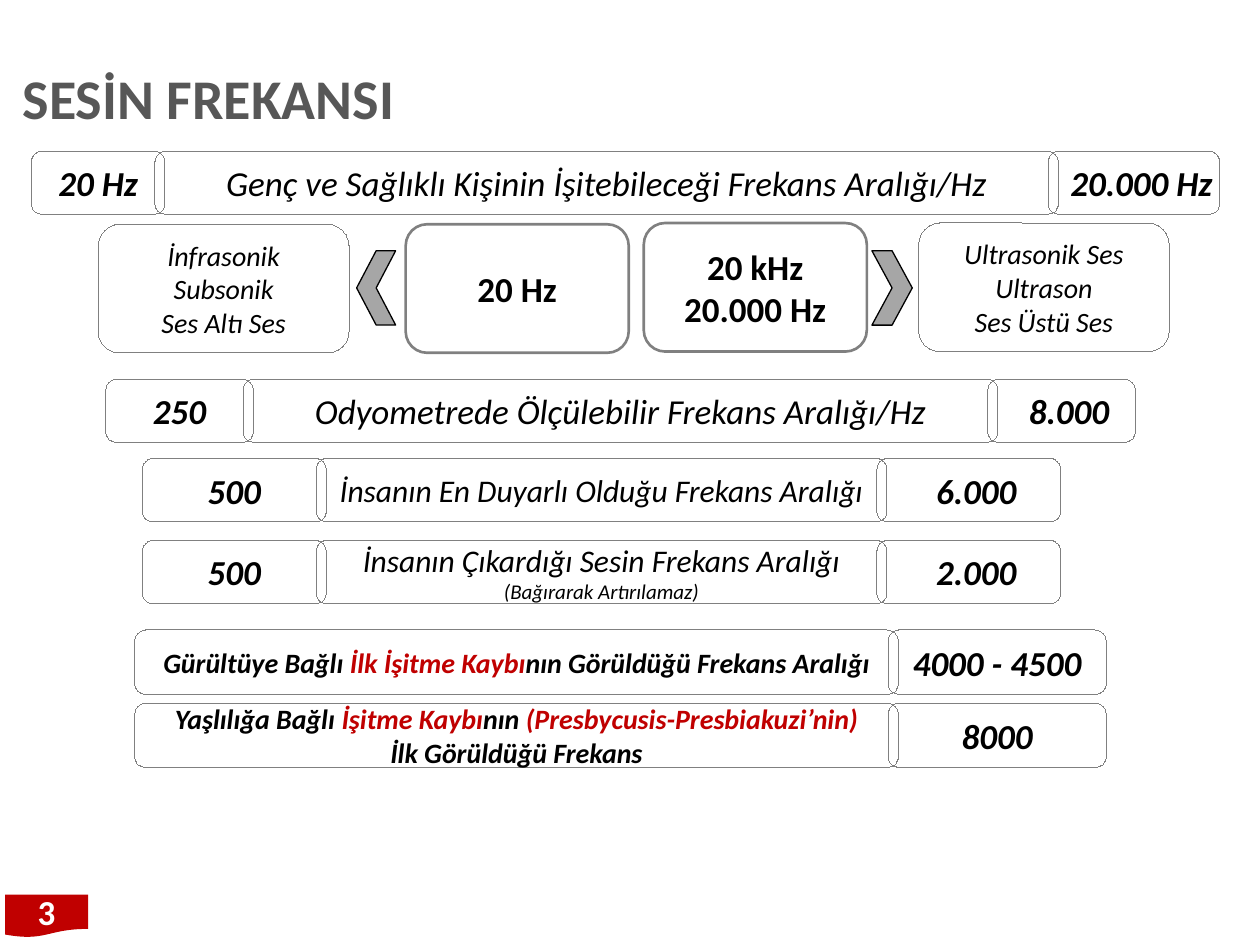
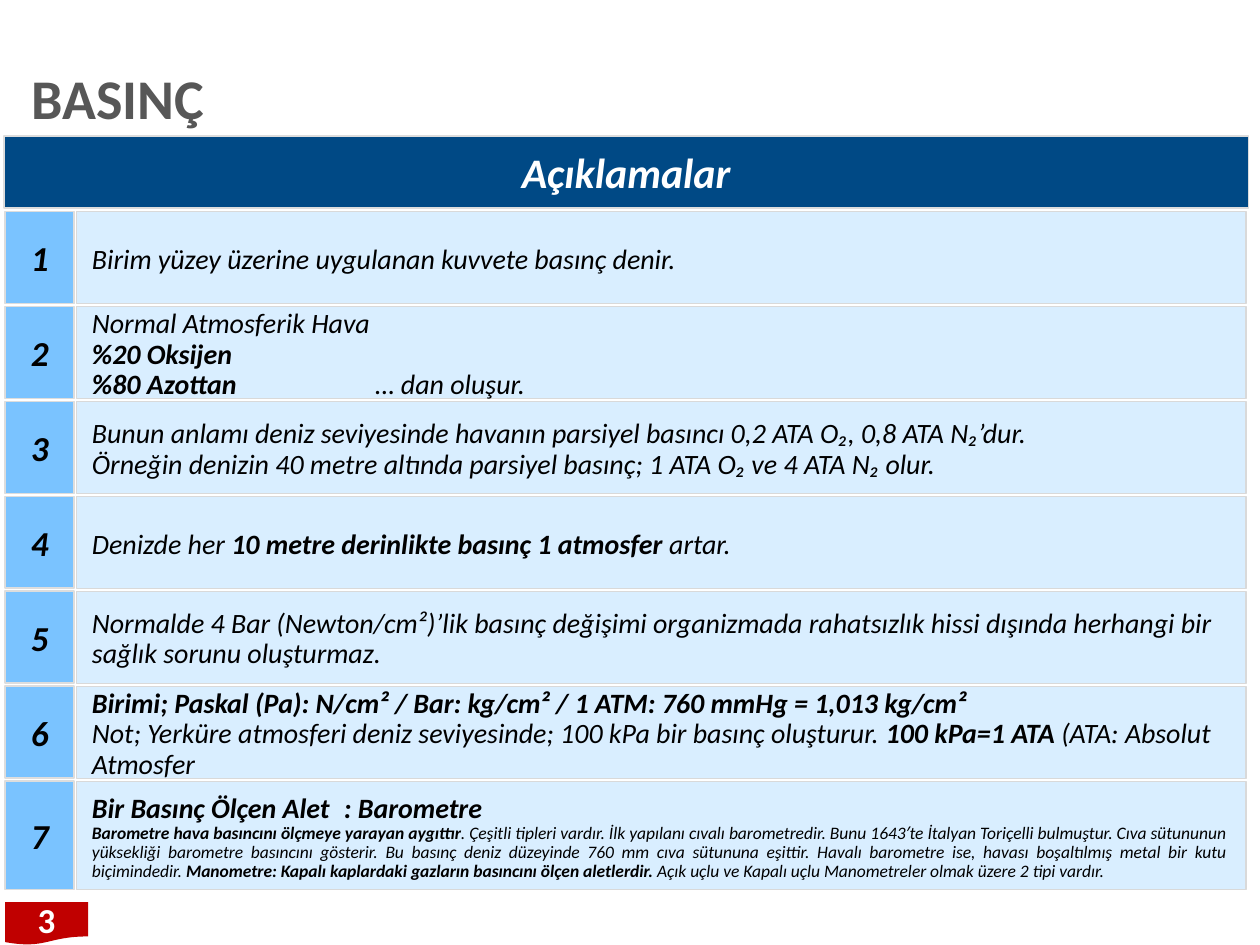
from dataclasses import dataclass
from typing import NamedTuple

from lxml.etree import SubElement
from pptx import Presentation
from pptx.dml.color import RGBColor
from pptx.enum.shapes import MSO_SHAPE
from pptx.enum.text import MSO_ANCHOR, PP_ALIGN
from pptx.oxml.ns import qn
from pptx.util import Inches, Pt

FONT = "Calibri"
BLACK, WHITE, GREY, RED = "000000", "FFFFFF", "575757", "C00000"
OUTLINE, CHEVRON = "808080", "A6A6A6"
NAVY, BLUE, PALE, EDGE, BODY_EDGE = "004985", "7AC3FF", "BDE1FF", "DDDDDD", "D9D9D9"
PILL_OVERLAP = 0.08
ROW_TOP, ROW_PITCH, ROW_HEIGHT, LAST_HEIGHT = 1.68, 4.52 / 6, 0.73, 0.86


class Run(NamedTuple):
    text: str
    size: float = 16
    bold: bool = False
    italic: bool = True
    color: str = BLACK


class Para(NamedTuple):
    runs: list[Run]
    align: PP_ALIGN = PP_ALIGN.LEFT
    tab: float = 0


class Box(NamedTuple):
    left: float
    top: float
    width: float
    height: float


@dataclass
class Style:
    fill: str | None = None
    line: str | None = None
    line_width: float = 0
    alpha: int = 100
    insets: tuple[float, float, float, float] = (0.1, 0.05, 0.1, 0.05)
    wrap: bool = True
    spacing: float | None = None


@dataclass
class PillRow:
    left: float
    top: float
    widths: list[float]
    cells: list[list[Para]]
    height: float = 0.5


PILL = Style(line=OUTLINE, wrap=False)
SHIFTED_PILL = Style(line=OUTLINE, wrap=False, insets=(0.12, 0.05, 0, 0.05))
BOLD_PILL = Style(line=OUTLINE, line_width=1.5, wrap=False)
ARROW = Style(fill=CHEVRON, line=BLACK, line_width=0.75)
PAGE_BADGE = Style(fill=RED)
TITLE = Style(insets=(0, 0.05, 0, 0.05), spacing=0.9)
HEADER = Style(fill=NAVY, line=EDGE, line_width=1, insets=(0, 0, 0, 0))
NUMBER = Style(fill=BLUE, line=EDGE, line_width=1, insets=(0, 0, 0, 0))
BODY = Style(fill=PALE, line=BODY_EDGE, line_width=0.75, alpha=56,
             insets=(0.12, 0.12, 0.16, 0.08), spacing=0.9)


def rgb(value: str) -> RGBColor:
    return RGBColor.from_string(value)


def centered(*runs: Run) -> Para:
    return Para(list(runs), PP_ALIGN.CENTER)


def value(text: str) -> list[Para]:
    return [centered(Run(text, 20, True))]


def caption(text: str, size: float) -> Para:
    return centered(Run(text, size))


def strong(text: str, color: str = BLACK) -> Run:
    return Run(text, bold=True, color=color)


def write(sp, paras: list[Para], style: Style) -> None:
    tf = sp.text_frame
    tf.word_wrap = style.wrap
    tf.vertical_anchor = MSO_ANCHOR.MIDDLE
    tf.margin_left, tf.margin_top, tf.margin_right, tf.margin_bottom = map(Inches, style.insets)
    for i, para in enumerate(paras):
        p = tf.paragraphs[0] if i == 0 else tf.add_paragraph()
        p.alignment = para.align
        if style.spacing:
            p.line_spacing = style.spacing
        if para.tab:
            tabs = SubElement(p._p.get_or_add_pPr(), qn("a:tabLst"))
            SubElement(tabs, qn("a:tab"), pos=str(Inches(para.tab)), algn="l")
        for run in para.runs:
            r = p.add_run()
            r.text = run.text
            r.font.name = FONT
            r.font.size = Pt(run.size)
            r.font.bold = run.bold
            r.font.italic = run.italic
            r.font.color.rgb = rgb(run.color)


def add_shape(s, kind: MSO_SHAPE, box: Box, style: Style, paras: list[Para] | None = None):
    sp = s.shapes.add_shape(kind, *map(Inches, box))
    sp.shadow.inherit = False
    if style.fill:
        sp.fill.solid()
        sp.fill.fore_color.rgb = rgb(style.fill)
        if style.alpha < 100:
            color = sp.fill._xPr.find(qn("a:solidFill"))[0]
            SubElement(color, qn("a:alpha"), val=str(style.alpha * 1000))
    else:
        sp.fill.background()
    if style.line:
        sp.line.color.rgb = rgb(style.line)
        sp.line._get_or_add_ln().set("w", str(Pt(style.line_width)))
    else:
        sp.line.fill.background()
    if paras:
        write(sp, paras, style)
    return sp


def add_base(prs, title: str, title_left: float, badge_top: float):
    s = prs.slides.add_slide(prs.slide_layouts[6])
    title_box = s.shapes.add_textbox(*map(Inches, Box(title_left, 0.45, 9.64, 0.71)))
    write(title_box, [Para([Run(title, 32, True, False, GREY)])], TITLE)
    add_shape(s, MSO_SHAPE.FLOWCHART_DOCUMENT, Box(0.04, badge_top, 0.66, 0.34), PAGE_BADGE,
              [centered(Run("3", 20, True, False, WHITE))])
    return s


def add_pill_row(s, row: PillRow) -> None:
    left = row.left
    for i, (width, paras) in enumerate(zip(row.widths, row.cells)):
        style = SHIFTED_PILL if i == 2 else PILL
        add_shape(s, MSO_SHAPE.ROUNDED_RECTANGLE, Box(left, row.top, width, row.height),
                  style, paras)
        left += width - PILL_OVERLAP


def add_frequency_slide(prs) -> None:
    s = add_base(prs, "SESİN FREKANSI", 0.18, 7.1)
    rows = [
        PillRow(0.25, 1.2, [1.06, 7.17, 1.36], [
            value("20 Hz"),
            [caption("Genç ve Sağlıklı Kişinin İşitebileceği Frekans Aralığı/Hz", 20)],
            value("20.000 Hz")]),
        PillRow(0.84, 3.01, [1.17, 5.99, 1.17], [
            value("250"),
            [caption("Odyometrede Ölçülebilir Frekans Aralığı/Hz", 20)],
            value("8.000")]),
        PillRow(1.13, 3.64, [1.46, 4.53, 1.46], [
            value("500"),
            [caption("İnsanın En Duyarlı Olduğu Frekans Aralığı", 18)],
            value("6.000")]),
        PillRow(1.13, 4.29, [1.46, 4.53, 1.46], [
            value("500"),
            [caption("İnsanın Çıkardığı Sesin Frekans Aralığı", 18),
             caption("(Bağırarak Artırılamaz)", 12)],
            value("2.000")]),
        PillRow(1.07, 5, [6.06, 1.73], [
            [centered(strong("Gürültüye Bağlı "), strong("İlk İşitme Kaybı", RED),
                      strong("nın Görüldüğü Frekans Aralığı"))],
            value("4000 - 4500")], 0.51),
        PillRow(1.07, 5.58, [6.06, 1.73], [
            [centered(strong("Yaşlılığa Bağlı "), strong("İşitme Kaybı", RED), strong("nın "),
                      strong("(Presbycusis-Presbiakuzi’nin)", RED)),
             centered(strong("İlk Görüldüğü Frekans"))],
            value("8000")], 0.51),
    ]
    for row in rows:
        add_pill_row(s, row)

    ranges = [
        (Box(0.78, 1.78, 1.99, 1.02), ["İnfrasonik", "Subsonik", "Ses Altı Ses"],
         Box(3.22, 1.78, 1.77, 1.02), ["20 Hz"], Box(2.83, 1.99, 0.31, 0.59), 180),
        (Box(7.29, 1.77, 1.99, 1.02), ["Ultrasonik Ses", "Ultrason", "Ses Üstü Ses"],
         Box(5.11, 1.77, 1.77, 1.02), ["20 kHz", "20.000 Hz"], Box(6.92, 1.99, 0.32, 0.59), 0),
    ]
    for name_box, names, limit_box, limits, arrow_box, rotation in ranges:
        add_shape(s, MSO_SHAPE.ROUNDED_RECTANGLE, name_box, PILL,
                  [caption(name, 16) for name in names])
        add_shape(s, MSO_SHAPE.ROUNDED_RECTANGLE, limit_box, BOLD_PILL,
                  [centered(Run(limit, 20, True, False)) for limit in limits])
        add_shape(s, MSO_SHAPE.CHEVRON, arrow_box, ARROW).rotation = rotation


def add_pressure_slide(prs) -> None:
    s = add_base(prs, "BASINÇ", 0.25, 7.16)
    notes = [
        [Para([Run("Birim yüzey üzerine uygulanan kuvvete basınç denir.")])],
        [Para([Run("Normal Atmosferik Hava")]),
         Para([strong("%20 Oksijen")]),
         Para([strong("%80 Azottan\t"), Run("… dan oluşur.")], tab=2.25)],
        [Para([Run("Bunun anlamı deniz seviyesinde havanın parsiyel basıncı "
                   "0,2 ATA O₂, 0,8 ATA N₂’dur.")]),
         Para([Run("Örneğin denizin 40 metre altında parsiyel basınç; "
                   "1 ATA O₂ ve 4 ATA N₂ olur.")])],
        [Para([Run("Denizde her "), strong("10 metre derinlikte basınç 1 atmosfer "),
               Run("artar.")])],
        [Para([Run("Normalde 4 Bar (Newton/cm²)’lik basınç değişimi organizmada rahatsızlık "
                   "hissi dışında herhangi bir sağlık sorunu oluşturmaz.")])],
        [Para([strong("Birimi; Paskal (Pa): N/cm² / Bar: kg/cm² / 1 ATM: 760 mmHg = "
                      "1,013 kg/cm²")]),
         Para([Run("Not; Yerküre atmosferi deniz seviyesinde; 100 kPa bir basınç oluşturur. "),
               strong("100 kPa=1 ATA "), Run("(ATA: Absolut Atmosfer")])],
        [Para([strong("Bir Basınç Ölçen Alet\t: Barometre")], tab=2),
         Para([Run("Barometre hava basıncını ölçmeye yarayan aygıttır", 10, True),
               Run(". Çeşitli tipleri vardır. İlk yapılanı cıvalı barometredir. Bunu 1643′te "
                   "İtalyan Toriçelli bulmuştur. Cıva sütununun yüksekliği barometre basıncını "
                   "gösterir. Bu basınç deniz düzeyinde 760 mm cıva sütununa eşittir. Havalı "
                   "barometre ise, havası boşaltılmış metal bir kutu biçimindedir. ", 10),
               Run("Manometre: Kapalı kaplardaki gazların basıncını ölçen aletlerdir. ", 10, True),
               Run("Açık uçlu ve Kapalı uçlu Manometreler olmak üzere 2 tipi vardır.", 10)],
              PP_ALIGN.JUSTIFY)],
    ]
    for i, paras in enumerate(notes):
        top = ROW_TOP + i * ROW_PITCH
        height = LAST_HEIGHT if i == len(notes) - 1 else ROW_HEIGHT
        add_shape(s, MSO_SHAPE.RECTANGLE, Box(0.04, top, 0.55, height), NUMBER, value(str(i + 1)))
        add_shape(s, MSO_SHAPE.RECTANGLE, Box(0.61, top, 9.28, height), BODY, paras)
    add_shape(s, MSO_SHAPE.RECTANGLE, Box(0.03, 1.08, 9.88, 0.57), HEADER,
              [centered(Run("Açıklamalar", 24, True, True, WHITE))])


def main() -> None:
    prs = Presentation()
    prs.slide_width, prs.slide_height = Inches(10), Inches(7.5)
    add_frequency_slide(prs)
    add_pressure_slide(prs)
    prs.save("out.pptx")


if __name__ == "__main__":
    main()
